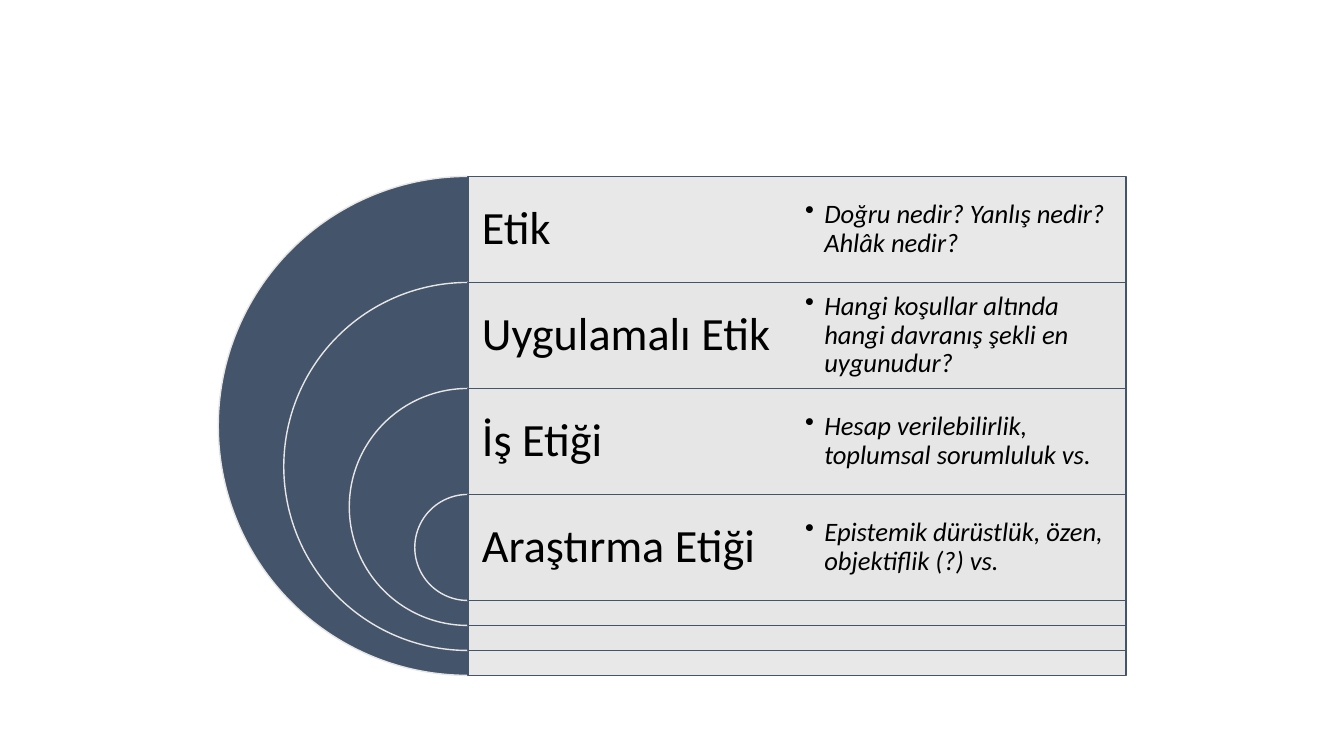
import pptx
import pptx.dml.color
import pptx.enum.shapes
import pptx.enum.text
import pptx.oxml
import pptx.oxml.ns
import pptx.util

LEVELS = [
    ("Etik", "Doğru nedir? Yanlış nedir? Ahlâk nedir?"),
    ("Uygulamalı Etik", "Hangi koşullar altında hangi davranış şekli en uygunudur?"),
    ("İş Etiği", "Hesap verilebilirlik, toplumsal sorumluluk vs."),
    ("Araştırma Etiği", "Epistemik dürüstlük, özen, objektiflik (?) vs."),
]
NAVY, GREY, BLACK = "44546A", "E7E6E6", "000000"
FONT = "Calibri"

TOP, AXIS = 1.75, 4.64          # top of the diagram, flat edge of the half discs
DISC = 4.95                     # diameter of the outermost disc
BAND = DISC * 17 / 80           # height of one level
SHRINK = DISC * 21 / 80         # loss of diameter from one level to the next
PANEL_WIDTH = 6.53
COLUMN = PANEL_WIDTH / 2
BULLET_INDENT = 0.19

inches = pptx.util.Inches
presets = pptx.enum.shapes.MSO_SHAPE


def rgb(code):
    return pptx.dml.color.RGBColor.from_string(code)


def add_outlined(slide, preset, box, fill, line):
    shape = slide.shapes.add_shape(preset, *map(inches, box))
    shape.shadow.inherit = False
    shape.fill.solid()
    shape.fill.fore_color.rgb = rgb(fill)
    shape.line.color.rgb = rgb(line)
    shape.line.width = pptx.util.Pt(1)
    return shape


def set_opacity(shape, percent):
    color = shape.fill._xPr.find(".//" + pptx.oxml.ns.qn("a:srgbClr"))
    alpha = pptx.oxml.parse_xml(
        f'<a:alpha {pptx.oxml.ns.nsdecls("a")} val="{percent * 1000}"/>')
    color.append(alpha)


def add_bullet(paragraph):
    properties = paragraph._p.get_or_add_pPr()
    properties.set("marL", str(inches(BULLET_INDENT)))
    properties.set("indent", str(-inches(BULLET_INDENT)))
    properties.append(pptx.oxml.parse_xml(
        f'<a:buChar {pptx.oxml.ns.nsdecls("a")} char="•"/>'))


def add_label(slide, wording, column, row, size, inset, bulleted=False):
    box = (AXIS + column * COLUMN, TOP + row * BAND, COLUMN, BAND)
    frame = slide.shapes.add_textbox(*map(inches, box)).text_frame
    frame.word_wrap = True
    frame.vertical_anchor = pptx.enum.text.MSO_ANCHOR.MIDDLE
    frame.margin_left = frame.margin_right = inches(inset)
    frame.margin_top = frame.margin_bottom = inches(inset)
    paragraph = frame.paragraphs[0]
    if bulleted:
        paragraph.level = 1
        add_bullet(paragraph)
    paragraph.line_spacing = 0.9
    run = paragraph.add_run()
    run.text = wording
    run.font.name = FONT
    run.font.size = pptx.util.Pt(size)
    run.font.italic = bulleted
    run.font.color.rgb = rgb(BLACK)


def main():
    deck = pptx.Presentation()
    deck.slide_width, deck.slide_height = inches(13.33), inches(7.5)
    slide = deck.slides.add_slide(deck.slide_layouts[6])

    for row, (name, _) in enumerate(LEVELS):
        top = TOP + row * BAND
        diameter = DISC - row * SHRINK
        disc = add_outlined(slide, presets.PIE,
                            (AXIS - diameter / 2, top, diameter, diameter), NAVY, GREY)
        disc.adjustments[0], disc.adjustments[1] = 54, 162  # left half
        panel = add_outlined(slide, presets.RECTANGLE,
                             (AXIS, top, PANEL_WIDTH, diameter), GREY, NAVY)
        set_opacity(panel, 90)
        add_label(slide, name, 0, row, 33, 0.14)

    for row, (_, question) in enumerate(LEVELS):
        add_label(slide, question, 1, row, 19, 0.08, bulleted=True)

    deck.save("out.pptx")


if __name__ == "__main__":
    main()
